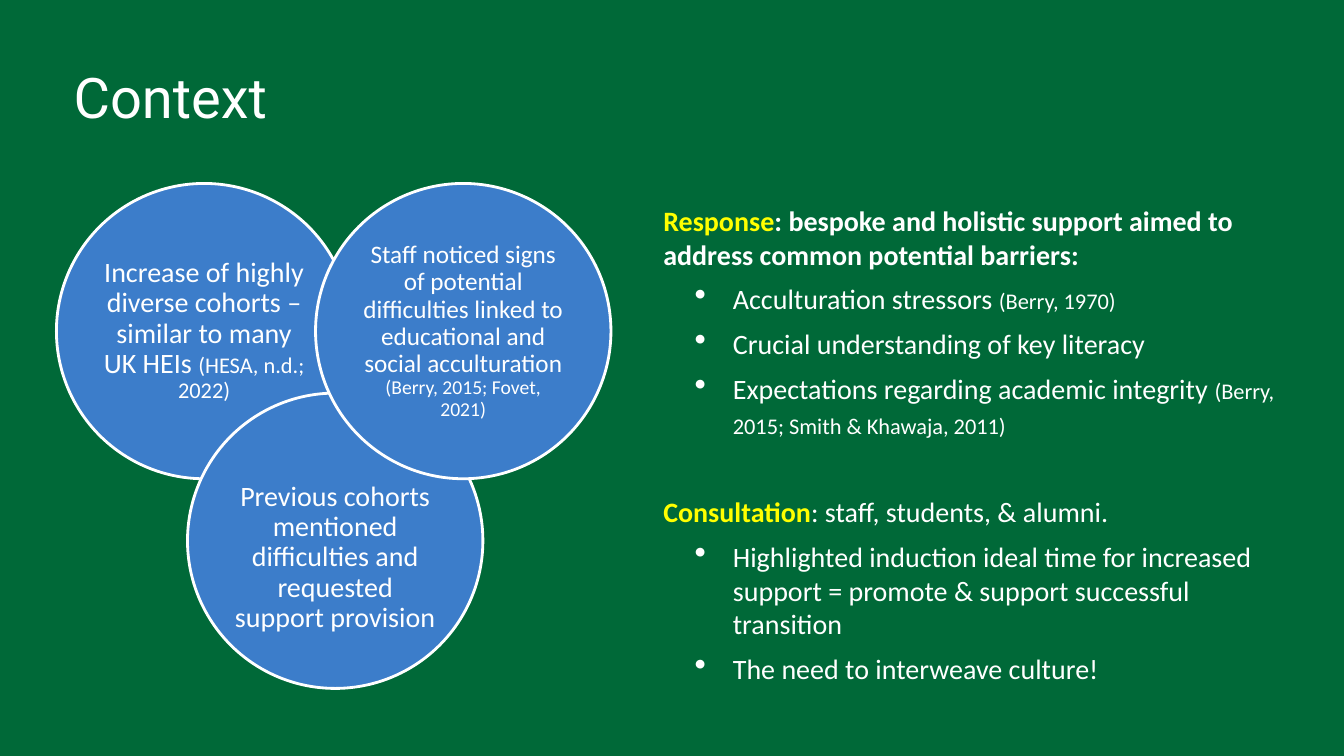
import pptx
import pptx.dml.color
import pptx.enum.shapes
import pptx.enum.text
import pptx.oxml.ns
import pptx.util
from lxml import etree

Inches, Pt = pptx.util.Inches, pptx.util.Pt
ALIGN = pptx.enum.text.PP_ALIGN
ANCHOR = pptx.enum.text.MSO_ANCHOR

GREEN, BLUE, WHITE, YELLOW = "006938", "3C7DCA", "FFFFFF", "FFFF00"
DIAMETER, INSET = 2.93, 0.03
BODY_SIZE, CITE_SIZE = 20, 16

TITLE = "Context"

# left, top, extra top inset, runs as (text, size)
CIRCLES = [
    (0.56, 1.82, 0, [
        ("Increase of highly diverse cohorts – similar to many UK HEIs ", 20),
        ("(HESA, n.d.; 2022)", 16)]),
    (1.86, 3.9, 0.34, [
        ("Previous cohorts mentioned difficulties and requested support provision", 20)]),
    (3.13, 1.82, 0, [
        ("Staff noticed signs of potential difficulties linked to educational"
         " and social acculturation ", 18),
        ("(Berry, 2015; Fovet, 2021)", 14)]),
]

# heading, text after it, whether that text is bold, bullets as (text, citation)
SECTIONS = [
    ("Response",
     ": bespoke and holistic support aimed to address common potential barriers:", True, [
         ("Acculturation stressors ", "(Berry, 1970)"),
         ("Crucial understanding of key literacy", ""),
         ("Expectations regarding academic integrity ",
          "(Berry, 2015; Smith & Khawaja, 2011)")]),
    ("Consultation", ": staff, students, & alumni.", False, [
        ("Highlighted induction ideal time for increased support"
         " = promote & support successful transition", ""),
        ("The need to interweave culture!", "")]),
]


def rgb(value):
    return pptx.dml.color.RGBColor.from_string(value)


def add_run(p, text, size, color=WHITE, bold=False, font="Calibri"):
    r = p.add_run()
    r.text = text
    r.font.name = font
    r.font.size = Pt(size)
    r.font.bold = bold
    r.font.color.rgb = rgb(color)


def add_bullet(p):
    pPr = p._p.get_or_add_pPr()
    pPr.set("marL", str(Inches(0.69)))
    pPr.set("indent", str(Inches(-0.38)))
    qn = pptx.oxml.ns.qn
    etree.SubElement(pPr, qn("a:buSzPct")).set("val", "120000")
    etree.SubElement(pPr, qn("a:buChar")).set("char", "•")


def add_circle(slide, left, top, extra_inset, runs):
    s = slide.shapes.add_shape(
        pptx.enum.shapes.MSO_SHAPE.OVAL,
        Inches(left), Inches(top), Inches(DIAMETER), Inches(DIAMETER))
    s.shadow.inherit = False
    s.fill.solid()
    s.fill.fore_color.rgb = rgb(BLUE)
    s.line.color.rgb = rgb(WHITE)
    s.line.width = Pt(2)
    tf = s.text_frame
    tf.word_wrap = True
    tf.vertical_anchor = ANCHOR.MIDDLE
    tf.margin_left = tf.margin_right = tf.margin_bottom = Inches(INSET)
    tf.margin_top = Inches(INSET + extra_inset)
    p = tf.paragraphs[0]
    p.alignment = ALIGN.CENTER
    p.line_spacing = 0.9
    for text, size in runs:
        add_run(p, text, size)


def add_sections(slide):
    box = slide.shapes.add_textbox(Inches(6.48), Inches(1.97), Inches(6.48), Inches(3.49))
    tf = box.text_frame
    tf.word_wrap = True

    def next_paragraph():
        first = tf.paragraphs[0]
        p = tf.add_paragraph() if first.runs else first
        p.line_spacing = Pt(24)
        p.space_after = Pt(8)
        return p

    for i, (heading, rest, bold, bullets) in enumerate(SECTIONS):
        p = next_paragraph()
        if i:
            p.space_before = Pt(32)
        add_run(p, heading, BODY_SIZE, YELLOW, True)
        add_run(p, rest, BODY_SIZE, bold=bold)
        for text, citation in bullets:
            p = next_paragraph()
            add_bullet(p)
            add_run(p, text, BODY_SIZE)
            if citation:
                add_run(p, citation, CITE_SIZE)


def main():
    prs = pptx.Presentation()
    prs.slide_width, prs.slide_height = Inches(13.33), Inches(7.5)
    slide = prs.slides.add_slide(prs.slide_layouts[5])
    slide.background.fill.solid()
    slide.background.fill.fore_color.rgb = rgb(GREEN)

    title = slide.shapes.title
    title.left, title.top = Inches(0.63), Inches(0.68)
    title.width, title.height = Inches(12.07), Inches(1.13)
    tf = title.text_frame
    tf.vertical_anchor = ANCHOR.TOP
    p = tf.paragraphs[0]
    p.alignment = ALIGN.LEFT
    p.line_spacing = Pt(40)
    add_run(p, TITLE, 40, font="Roboto")

    for circle in CIRCLES:
        add_circle(slide, *circle)
    add_sections(slide)
    prs.save("out.pptx")


if __name__ == "__main__":
    main()
